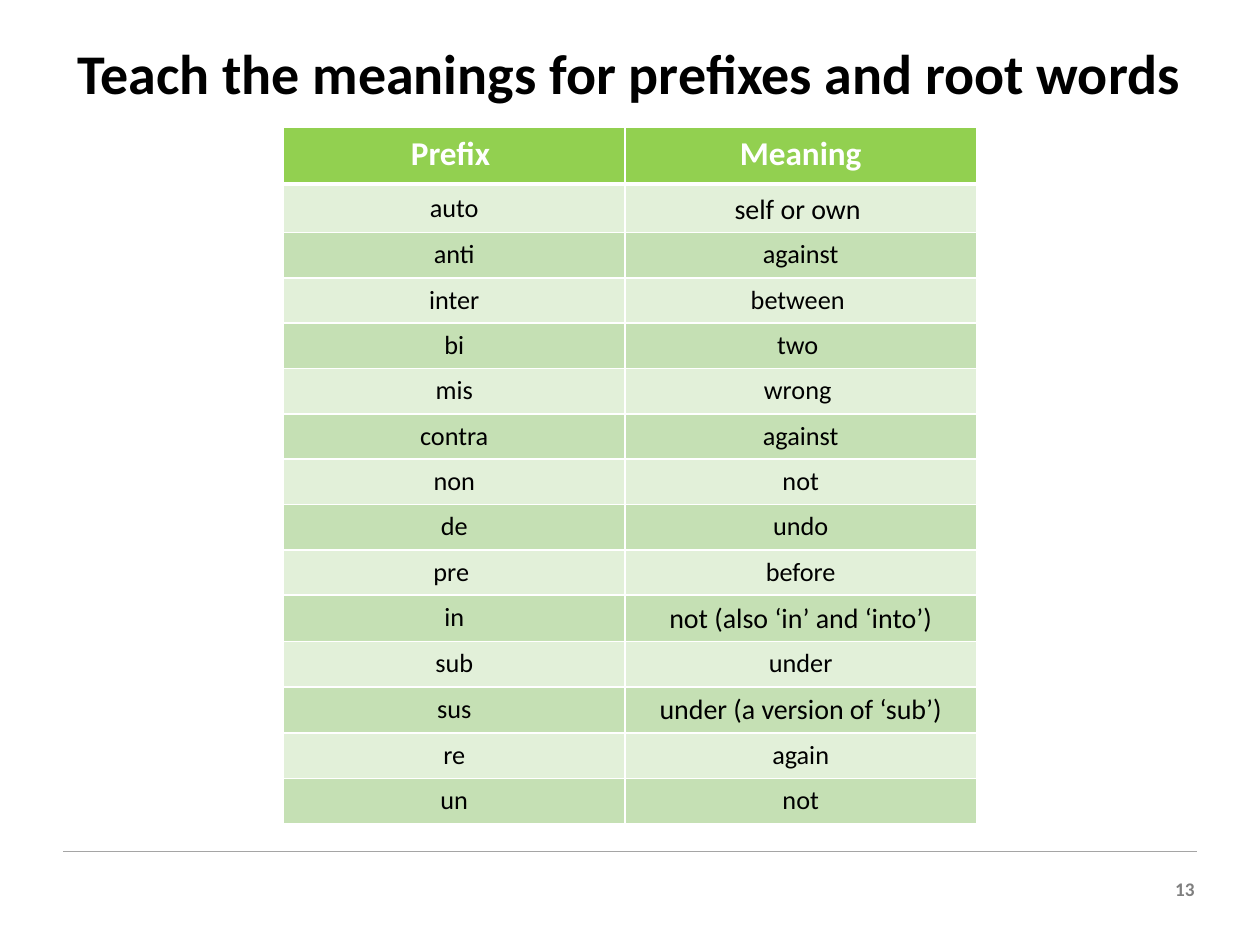
import pptx
import pptx.dml.color
import pptx.enum.shapes
import pptx.enum.text
import pptx.oxml
import pptx.oxml.ns
import pptx.util

Inches = pptx.util.Inches
ALIGN = pptx.enum.text.PP_ALIGN
ANCHOR = pptx.enum.text.MSO_ANCHOR


def color(hex_string):
    return pptx.dml.color.RGBColor.from_string(hex_string)


def write(para, text, size, hex_string, bold=False, align=ALIGN.CENTER, spacing=None):
    """Add one formatted run to a paragraph and set the paragraph's layout."""
    para.alignment = align
    para.line_spacing = spacing
    span = para.add_run()
    span.text = text
    formats = {"name": "Calibri", "size": pptx.util.Pt(size), "bold": bold}
    for name, value in formats.items():
        setattr(span.font, name, value)
    span.font.color.rgb = color(hex_string)


deck = pptx.Presentation()
deck.slide_width, deck.slide_height = Inches(10), Inches(7.5)
slide = deck.slides.add_slide(deck.slide_layouts[6])

# Footer rule and slide number
rule = slide.shapes.add_connector(
    pptx.enum.shapes.MSO_CONNECTOR.STRAIGHT,
    Inches(0.5), Inches(6.76), Inches(9.5), Inches(6.76))
rule.line.color.rgb = color("A5A5A5")
rule.line.width = pptx.util.Pt(0.75)
rule._element.spPr.append(pptx.oxml.parse_xml(
    f'<a:effectLst {pptx.oxml.ns.nsdecls("a")}/>'))

number_box = slide.shapes.add_textbox(Inches(9.2), Inches(6.91), Inches(0.38), Inches(0.29))
number_box.text_frame.word_wrap = True
write(number_box.text_frame.paragraphs[0], "13", 11, "7F7F7F", True, ALIGN.RIGHT)

# Title
title_box = slide.shapes.add_textbox(Inches(0.11), Inches(0.31), Inches(9.77), Inches(0.59))
title_box.text_frame.word_wrap = True
title_box.text_frame.vertical_anchor = ANCHOR.MIDDLE
write(title_box.text_frame.paragraphs[0], "Teach the meanings for prefixes and root words",
      32, "000000", True, spacing=0.9)

# Table of prefixes: text and size of the meaning
rows = [
    ("Prefix ", "Meaning", 19),
    ("auto", "self or own ", 16),
    ("anti", "against", 15),
    ("inter", "between ", 15),
    ("bi", "two ", 15),
    ("mis", "wrong ", 15),
    ("contra", "against", 15),
    ("non", "not", 15),
    ("de", "undo", 15),
    ("pre ", "before", 15),
    ("in", "not (also ‘in’ and ‘into’)", 16),
    ("sub", "under", 15),
    ("sus", "under (a version of ‘sub’)", 16),
    ("re", "again", 15),
    ("un", "not", 15),
]
column_widths = [2.71, 2.79]
row_heights = [0.45, 0.37] + [0.36] * (len(rows) - 2)
table = slide.shapes.add_table(
    len(rows), 2, Inches(2.25), Inches(1.01),
    Inches(sum(column_widths)), Inches(sum(row_heights))).table
table.first_row = True
table.horz_banding = False
for column, width in zip(table.columns, column_widths):
    column.width = Inches(width)

for row_index, (prefix, meaning, meaning_size) in enumerate(rows):
    table.rows[row_index].height = Inches(row_heights[row_index])
    header = row_index == 0
    if header:
        fill = "92D050"
    else:
        fill = "E2F0D9" if row_index % 2 else "C5E0B4"
    border_points = {"lnL": 1, "lnR": 1,
                     "lnT": 3 if row_index == 1 else 1,
                     "lnB": 3 if header else 1}
    prefix_size = 19 if header else 15
    for column_index, (text, size) in enumerate(
            [(prefix, prefix_size), (meaning, meaning_size)]):
        cell = table.cell(row_index, column_index)
        properties = cell._tc.get_or_add_tcPr()
        for side, points in border_points.items():
            properties.append(pptx.oxml.parse_xml(
                f'<a:{side} {pptx.oxml.ns.nsdecls("a")} w="{pptx.util.Pt(points)}">'
                f'<a:solidFill><a:srgbClr val="FFFFFF"/></a:solidFill></a:{side}>'))
        cell.fill.solid()
        cell.fill.fore_color.rgb = color(fill)
        write(cell.text_frame.paragraphs[0], text, size,
              "FFFFFF" if header else "000000", header,
              spacing=1.07 if row_index == 1 else None)

deck.save("out.pptx")
